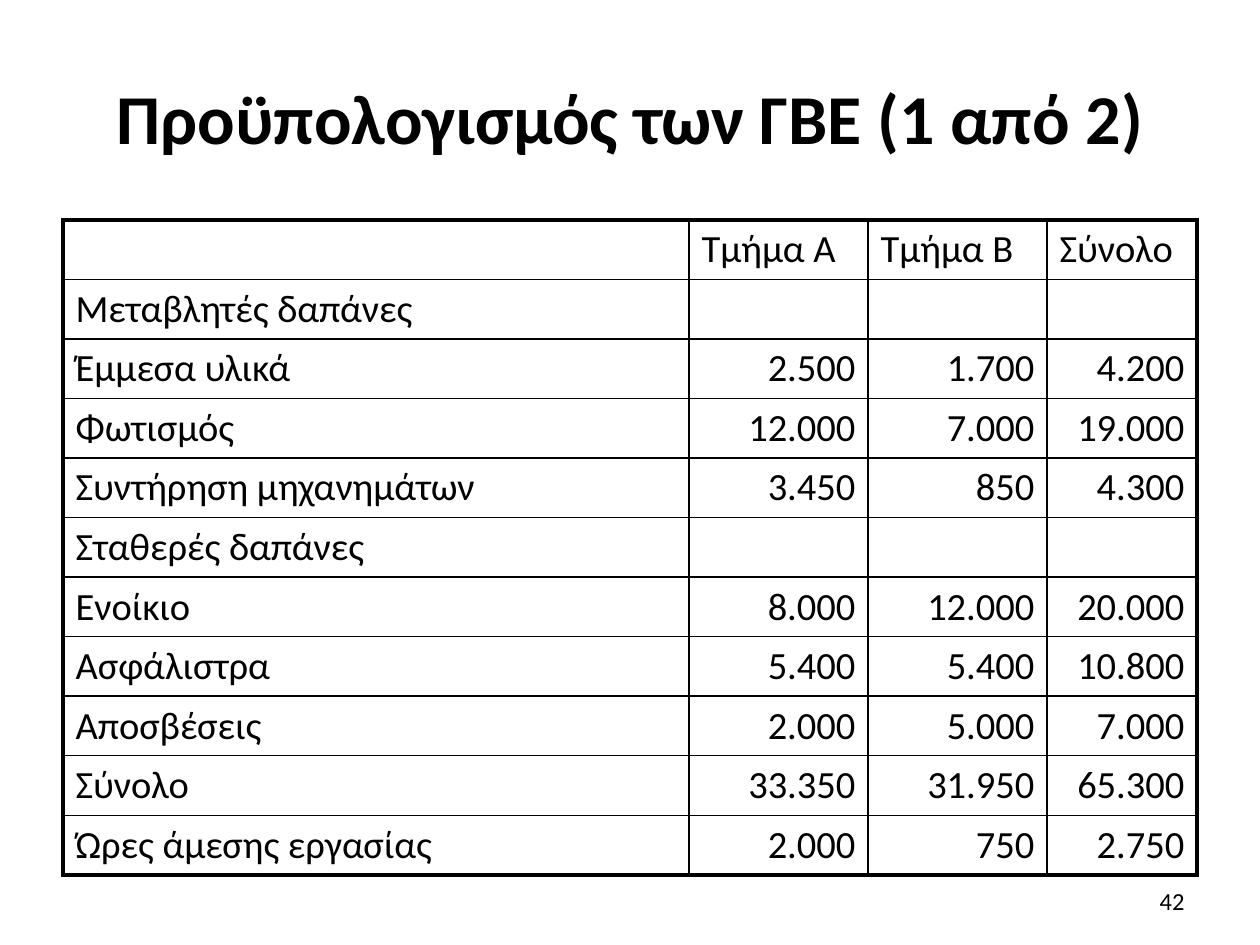
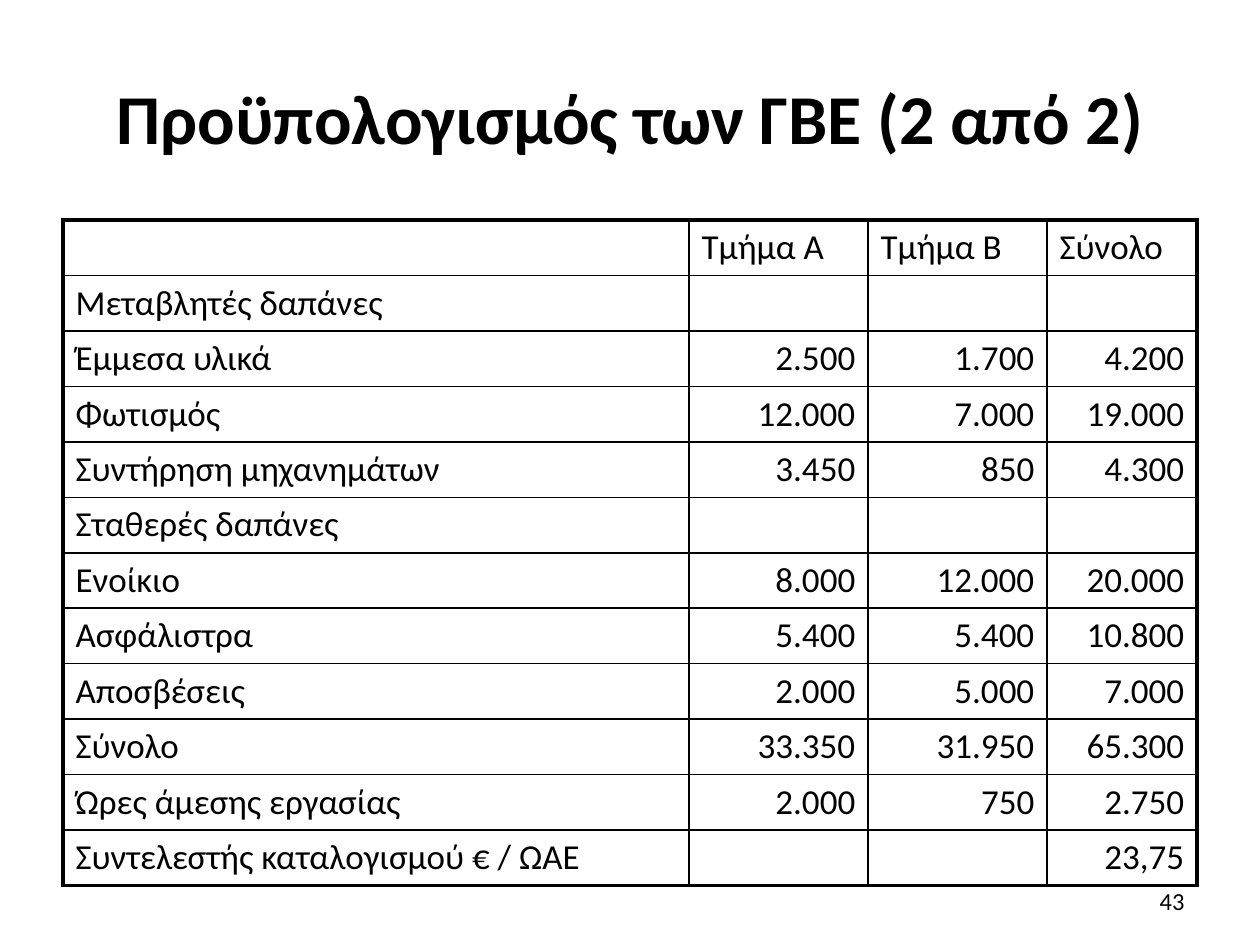
import pptx
import pptx.dml.color
import pptx.enum.text
import pptx.oxml
import pptx.oxml.ns
import pptx.util

COLORS = {"text": "000000", "border": "000000", "background": "FFFFFF"}
FONT = "Calibri"
PX = pptx.util.Inches(1) // 126
SLIDE_SIZE = (1260, 945)
TITLE_BOX = (63, 38, 1134, 157)
NUMBER_BOX = (903, 876, 294, 50)
TABLE_ORIGIN = (63, 220)
COLUMN_WIDTHS = (626, 179, 179, 150)
OUTER_BORDER, INNER_BORDER = 2.25, 1

BUDGET = [
    ("", "Τμήμα Α", "Τμήμα Β", "Σύνολο"),
    ("Μεταβλητές δαπάνες", "", "", ""),
    ("Έμμεσα υλικά", "2.500", "1.700", "4.200"),
    ("Φωτισμός", "12.000", "7.000", "19.000"),
    ("Συντήρηση μηχανημάτων", "3.450", "850", "4.300"),
    ("Σταθερές δαπάνες", "", "", ""),
    ("Ενοίκιο", "8.000", "12.000", "20.000"),
    ("Ασφάλιστρα", "5.400", "5.400", "10.800"),
    ("Αποσβέσεις", "2.000", "5.000", "7.000"),
    ("Σύνολο", "33.350", "31.950", "65.300"),
    ("Ώρες άμεσης εργασίας", "2.000", "750", "2.750"),
]
RATE = ("Συντελεστής καταλογισμού € / ΩΑΕ", "", "", "23,75")

SLIDES = [
    {"title": "Προϋπολογισμός των ΓΒΕ (1 από 2)", "number": "42",
     "rows": BUDGET, "table_height": 655, "text_size": 22},
    {"title": "Προϋπολογισμός των ΓΒΕ (2 από 2)", "number": "43",
     "rows": BUDGET + [RATE], "table_height": 666, "text_size": 20},
]

ALIGN = pptx.enum.text.PP_ALIGN


def write(text_frame, text, size, align, bold=False):
    paragraph = text_frame.paragraphs[0]
    paragraph.alignment = align
    run = paragraph.add_run()
    run.text = text
    run.font.name = FONT
    run.font.size = pptx.util.Pt(size)
    run.font.bold = bold
    run.font.color.rgb = pptx.dml.color.RGBColor.from_string(COLORS["text"])


def add_text(slide, box, text, size, align, bold=False):
    shape = slide.shapes.add_textbox(*(length * PX for length in box))
    shape.text_frame.word_wrap = True
    shape.text_frame.vertical_anchor = pptx.enum.text.MSO_ANCHOR.MIDDLE
    write(shape.text_frame, text, size, align, bold)


def set_borders(cell, outer_sides):
    """Draw all four borders, thicker on the sides at the table's edge."""
    properties = cell._tc.get_or_add_tcPr()
    for side, is_outer in outer_sides.items():
        width = pptx.util.Pt(OUTER_BORDER if is_outer else INNER_BORDER)
        properties.append(pptx.oxml.parse_xml(
            f'<a:ln{side} {pptx.oxml.ns.nsdecls("a")} w="{width}"><a:solidFill>'
            f'<a:srgbClr val="{COLORS["border"]}"/></a:solidFill></a:ln{side}>'))


def add_budget_table(slide, rows, height, text_size):
    left, top = TABLE_ORIGIN
    last_row, last_column = len(rows) - 1, len(COLUMN_WIDTHS) - 1
    table = slide.shapes.add_table(
        len(rows), len(COLUMN_WIDTHS), left * PX, top * PX,
        sum(COLUMN_WIDTHS) * PX, height * PX).table
    table.first_row = table.horz_banding = False
    for column, width in zip(table.columns, COLUMN_WIDTHS):
        column.width = width * PX
    for row_index, row in enumerate(rows):
        table.rows[row_index].height = height * PX // len(rows)
        for column_index, text in enumerate(row):
            cell = table.cell(row_index, column_index)
            set_borders(cell, {"L": column_index == 0, "R": column_index == last_column,
                               "T": row_index == 0, "B": row_index == last_row})
            cell.fill.background()
            if text:
                is_value = row_index > 0 and column_index > 0
                write(cell.text_frame, text, text_size,
                      ALIGN.RIGHT if is_value else ALIGN.LEFT)


def main():
    presentation = pptx.Presentation()
    presentation.slide_width, presentation.slide_height = (
        length * PX for length in SLIDE_SIZE)
    for content in SLIDES:
        slide = presentation.slides.add_slide(presentation.slide_layouts[6])
        slide.background.fill.solid()
        slide.background.fill.fore_color.rgb = pptx.dml.color.RGBColor.from_string(
            COLORS["background"])
        add_text(slide, TITLE_BOX, content["title"], 40, ALIGN.CENTER, bold=True)
        add_budget_table(slide, content["rows"], content["table_height"],
                         content["text_size"])
        add_text(slide, NUMBER_BOX, content["number"], 14, ALIGN.RIGHT)
    presentation.save("out.pptx")


if __name__ == "__main__":
    main()
